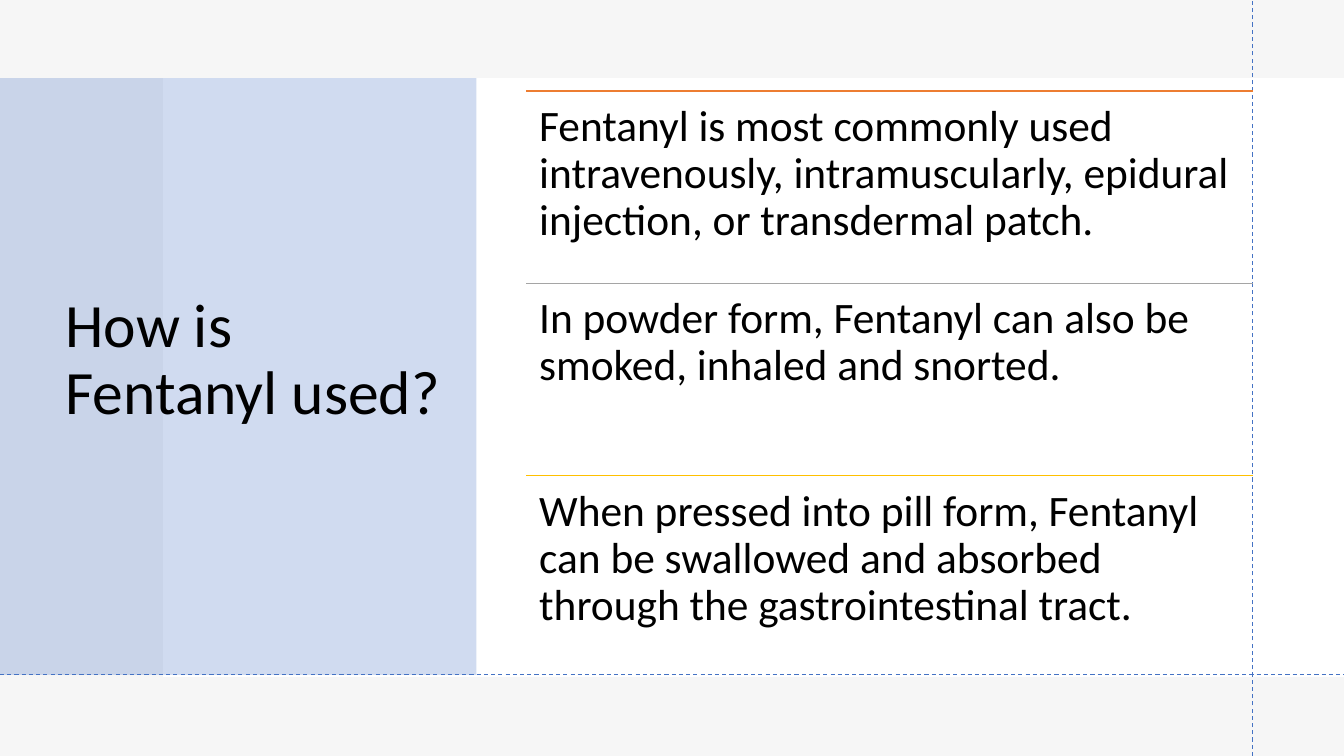
from lxml import etree
from pptx import Presentation
from pptx.dml.color import RGBColor
from pptx.enum.dml import MSO_LINE
from pptx.enum.shapes import MSO_CONNECTOR, MSO_SHAPE
from pptx.enum.text import MSO_ANCHOR
from pptx.oxml.ns import qn
from pptx.util import Cm, Pt

RECTANGLE = MSO_SHAPE.RECTANGLE
STRAIGHT = MSO_CONNECTOR.STRAIGHT
DASH = MSO_LINE.DASH
TOP = MSO_ANCHOR.TOP
MIDDLE = MSO_ANCHOR.MIDDLE

FONT = "Calibri"
WIDTH, HEIGHT = 33.87, 19.05
GUIDE_X, GUIDE_Y = 31.57, 16.99
WHITE, GRAY, BLUE, BLACK = "FFFFFF", "E7E6E6", "4472C4", "000000"

ROW_LEFT, ROW_TOP, ROW_HEIGHT = 13.26, 2.29, 4.85
ROW_WIDTH = GUIDE_X - ROW_LEFT
USES = [
    ("ED7D31", "Fentanyl is most commonly used intravenously, intramuscularly, "
               "epidural injection, or transdermal patch."),
    ("A5A5A5", "In powder form, Fentanyl can also be smoked, inhaled and snorted."),
    ("FFC000", "When pressed into pill form, Fentanyl can be swallowed and absorbed "
               "through the gastrointestinal tract."),
]


def color(value):
    return RGBColor.from_string(value)


def add_rectangle(slide, left, top, width, height, fill, opacity=100):
    shape = slide.shapes.add_shape(RECTANGLE, Cm(left), Cm(top), Cm(width), Cm(height))
    shape.shadow.inherit = False
    shape.fill.solid()
    shape.fill.fore_color.rgb = color(fill)
    shape.line.fill.background()
    if opacity < 100:
        fill_color = shape.element.spPr.find(qn("a:solidFill"))[0]
        etree.SubElement(fill_color, qn("a:alpha"), val=str(opacity * 1000))


def add_line(slide, start, end, stroke, width, dash=None):
    points = [Cm(value) for value in (*start, *end)]
    connector = slide.shapes.add_connector(STRAIGHT, *points)
    connector.line.color.rgb = color(stroke)
    connector.line.width = Pt(width)
    if dash:
        connector.line.dash_style = dash
    etree.SubElement(connector.element.spPr, qn("a:effectLst"))


def add_text(slide, left, top, width, height, text, size, anchor, inset):
    box = slide.shapes.add_textbox(Cm(left), Cm(top), Cm(width), Cm(height))
    frame = box.text_frame
    frame.word_wrap = True
    frame.vertical_anchor = anchor
    frame.margin_left = frame.margin_right = Cm(inset)
    frame.margin_top = frame.margin_bottom = Cm(inset)
    paragraph = frame.paragraphs[0]
    paragraph.line_spacing = 0.9
    run = paragraph.add_run()
    run.text = text
    run.font.name = FONT
    run.font.size = Pt(size)
    run.font.color.rgb = color(BLACK)


def main():
    presentation = Presentation()
    presentation.slide_width = Cm(WIDTH)
    presentation.slide_height = Cm(HEIGHT)
    slide = presentation.slides.add_slide(presentation.slide_layouts[6])

    add_rectangle(slide, 0, 0, WIDTH, HEIGHT, WHITE)
    add_rectangle(slide, 0, 0, WIDTH, HEIGHT, GRAY, 35)
    add_rectangle(slide, 4.11, 1.97, WIDTH - 4.11, 15.09, WHITE)
    add_rectangle(slide, 0, 1.97, 12.01, 15.04, BLUE, 25)
    add_text(slide, 1.4, 1.88, 10.03, 14.45, "How is Fentanyl used?", 44, MIDDLE, 0.25)

    add_line(slide, (GUIDE_X, HEIGHT), (GUIDE_X, 0), BLUE, 0.75, DASH)
    add_line(slide, (0, GUIDE_Y), (WIDTH, GUIDE_Y), BLUE, 0.75, DASH)

    for index, (accent, text) in enumerate(USES):
        top = ROW_TOP + index * ROW_HEIGHT
        add_line(slide, (ROW_LEFT, top), (GUIDE_X, top), accent, 1)
        add_text(slide, ROW_LEFT, top, ROW_WIDTH, ROW_HEIGHT, text, 31, TOP, 0.33)

    presentation.save("out.pptx")


if __name__ == "__main__":
    main()
